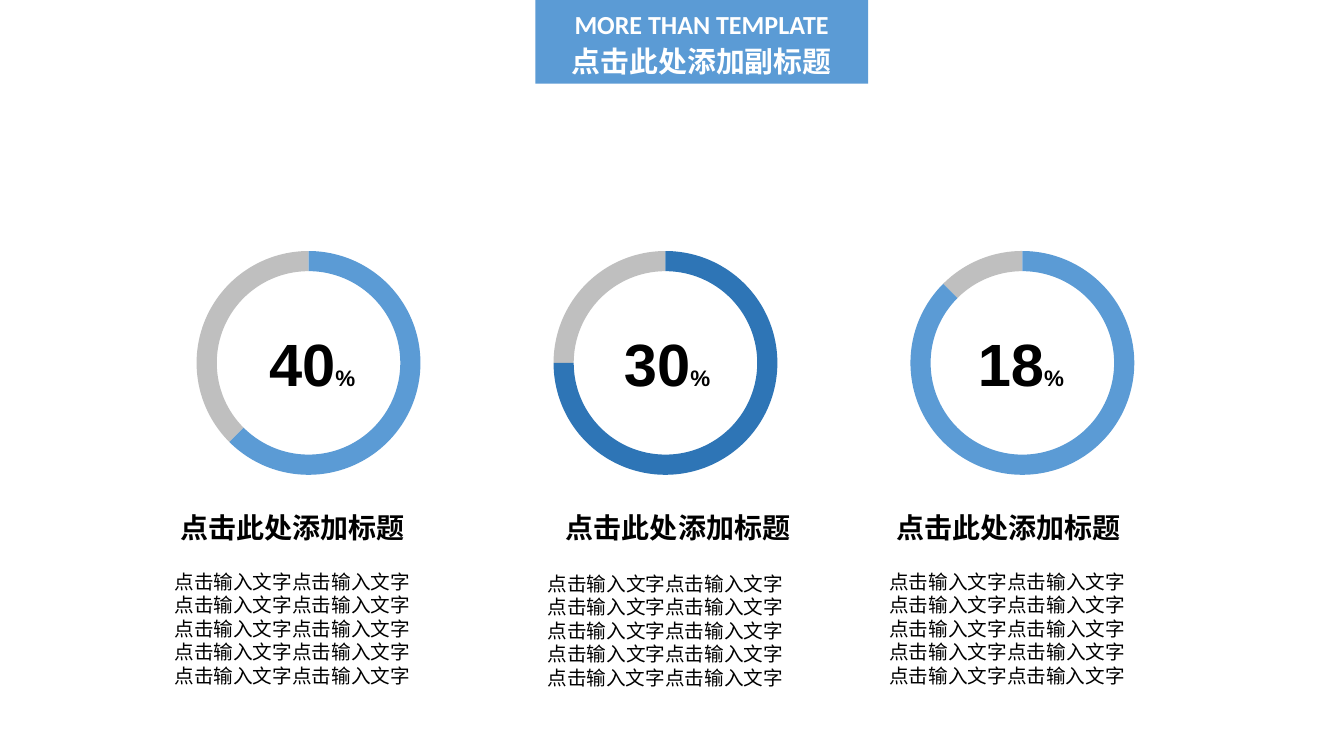
from dataclasses import dataclass

from lxml.etree import SubElement
from pptx import Presentation
from pptx.dml.color import RGBColor
from pptx.enum.shapes import MSO_SHAPE as Preset
from pptx.enum.text import MSO_ANCHOR as Anchor, MSO_AUTO_SIZE as AutoSize, PP_ALIGN as Align
from pptx.oxml.ns import qn
from pptx.util import Inches, Pt

BLUE = RGBColor(0x5B, 0x9B, 0xD5)
DARK_BLUE = RGBColor(0x2E, 0x75, 0xB6)
GRAY = RGBColor(0xBF, 0xBF, 0xBF)
BLACK = RGBColor(0, 0, 0)
WHITE = RGBColor(0xFF, 0xFF, 0xFF)
CJK_FONT = "Noto Sans CJK SC"
RING_LEFT, RING_TOP, RING_STEP = 1.95, 2.49, 3.54
RING_SIZE, RING_BAND = 2.22, 0.2
DEGREE = 0.6  # one degree as an adjustment value


@dataclass
class Column:
    percent: str
    sweep: int  # degrees clockwise from the top
    color: RGBColor
    percent_left: float
    title_left: float
    body_left: float
    body_top: float


COLUMNS = [
    Column("40", 225, BLUE, 2.57, 1.68, 1.55, 5.6),
    Column("30", 270, DARK_BLUE, 6.09, 5.5, 5.25, 5.62),
    Column("18", 315, BLUE, 9.6, 8.78, 8.64, 5.6),
]


def paint(shape, color: RGBColor) -> None:
    shape.shadow.inherit = False
    shape.fill.solid()
    shape.fill.fore_color.rgb = color
    shape.line.fill.background()


def add_arc(shapes, left: float, start: int, end: int, color: RGBColor) -> None:
    """Draw one band of a ring between two angles, clockwise from the top."""
    arc = shapes.add_shape(Preset.BLOCK_ARC, Inches(left), Inches(RING_TOP),
                           Inches(RING_SIZE), Inches(RING_SIZE))
    arc.adjustments[0] = (start - 90) % 360 * DEGREE
    arc.adjustments[1] = (end - 90) % 360 * DEGREE
    arc.adjustments[2] = RING_BAND / RING_SIZE
    paint(arc, color)


def style_span(span, size: float, font: str, color: RGBColor, bold: bool) -> None:
    span.font.size = Pt(size)
    span.font.bold = bold
    span.font.color.rgb = color
    span.font.name = font
    SubElement(span._r.get_or_add_rPr(), qn("a:ea")).set("typeface", font)


def add_text(page, left: float, top: float, width: float, height: float, text: str,
             size: float, font: str = CJK_FONT, bold: bool = True, wrap: bool = False,
             align: Align = Align.CENTER, spacing: float = 1.0):
    """Add a one-paragraph text box and return its paragraph."""
    box = page.shapes.add_textbox(Inches(left), Inches(top), Inches(width), Inches(height))
    frame = box.text_frame
    frame.text = text
    frame.word_wrap = wrap
    frame.auto_size = AutoSize.SHAPE_TO_FIT_TEXT
    para = frame.paragraphs[0]
    para.alignment = align
    para.line_spacing = spacing
    style_span(para.runs[0], size, font, BLACK, bold)
    return para


def add_banner(page) -> None:
    banner = page.shapes.add_shape(Preset.RECTANGLE, Inches(5.31), 0, Inches(3.3), Inches(0.83))
    paint(banner, BLUE)
    frame = banner.text_frame
    frame.text = "MORE THAN TEMPLATE\n点击此处添加副标题"
    frame.word_wrap = True
    frame.auto_size = AutoSize.SHAPE_TO_FIT_TEXT
    frame.vertical_anchor = Anchor.MIDDLE
    for para, size, font in zip(frame.paragraphs, (18.6, 20.6), ("Calibri", CJK_FONT)):
        para.alignment = Align.CENTER
        para.line_spacing = 1.1
        style_span(para.runs[0], size, font, WHITE, True)


def add_column(page, column: Column, ring_left: float) -> None:
    # Ring
    add_arc(page.shapes, ring_left, column.sweep, 360, GRAY)
    add_arc(page.shapes, ring_left, 0, column.sweep, column.color)
    # Percentage
    para = add_text(page, column.percent_left, 3.19, 1.07, 0.82, column.percent, 42.6,
                    font="Arial", align=Align.LEFT)
    sign = para.add_run()
    sign.text = "%"
    style_span(sign, 16, "Arial", BLACK, True)
    # Title and body
    add_text(page, column.title_left, 4.98, 2.45, 0.45, "点击此处添加标题", 20, spacing=1.1)
    add_text(page, column.body_left, column.body_top, 2.7, 1.28, "点击输入文字" * 10, 14,
             bold=False, wrap=True)


def main() -> None:
    deck = Presentation()
    deck.slide_width, deck.slide_height = Inches(13.33), Inches(7.5)
    page = deck.slides.add_slide(deck.slide_layouts[6])
    for index, column in enumerate(COLUMNS):
        add_column(page, column, RING_LEFT + index * RING_STEP)
    add_banner(page)
    deck.save("out.pptx")


if __name__ == "__main__":
    main()
